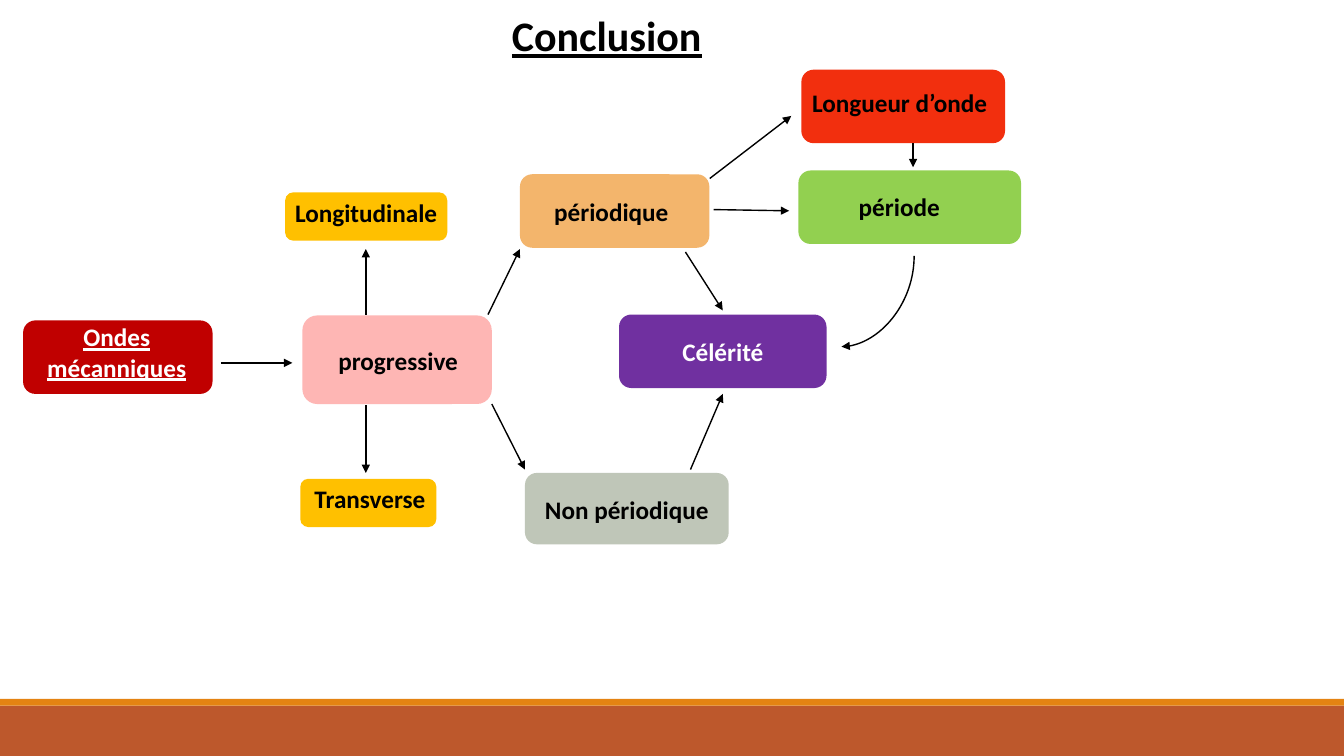
from lxml.etree import SubElement
from pptx import Presentation
from pptx.dml.color import RGBColor
from pptx.enum.shapes import MSO_CONNECTOR as LINK, MSO_SHAPE as SHAPE
from pptx.enum.text import PP_ALIGN as ALIGN
from pptx.oxml.ns import qn
from pptx.util import Inches, Pt

COLS, ROWS = 160, 90
CELL = Inches(1) / 12
BLACK, WHITE = "000000", "FFFFFF"
LINE_H = 4.8  # rows of a one-line label

# fill, box (column, row, width, height)
BOXES = [
    ("7030A0", (73.7, 37.45, 24.7, 8.75)),
    ("C00000", (2.75, 38.15, 22.55, 8.75)),
    ("F3B56C", (61.9, 20.75, 22.55, 8.75)),
    ("92D050", (95.05, 20.3, 26.5, 8.75)),
    ("BFC6B8", (62.5, 56.3, 24.25, 8.5)),
    ("FEB6B4", (36, 37.55, 22.55, 10.55)),
    ("F22F0E", (95.4, 8.3, 24.25, 8.75)),
    ("FFC000", (35.75, 57, 16.2, 5.75)),
    ("FFC000", (33.95, 22.9, 19.3, 5.75)),
]

# text, column, row, width
LABELS = [
    ("Transverse", 36.25, 56.9, 22.55),
    ("périodique", 64.8, 22.8, 16.8),
    ("progressive", 39.1, 40.55, 16.8),
    ("période", 101.05, 22.2, 23.75),
    ("Longueur d’onde", 95.5, 9.85, 26.5),
    ("Non périodique", 63.7, 58.2, 24.25),
    ("Longitudinale", 33.95, 22.9, 22.55),
]

# start column and row, end column and row
ARROWS = [
    (43.55, 48.25, 43.55, 56.3),
    (43.55, 37.45, 43.55, 29.65),
    (58.1, 37.45, 61.9, 29.65),
    (58.55, 48.1, 62.5, 55.9),
    (26.3, 43.2, 34.8, 43.2),
    (84.95, 24.95, 93.95, 25.1),
    (84.5, 21.25, 94.2, 13.8),
    (81.6, 30, 86.05, 36.95),
    (82.2, 55.9, 86.05, 46.9),
    (108.7, 17.05, 108.7, 19.9),
]


def color(code):
    return RGBColor.from_string(code)


def cells(spot):
    return [round(n * CELL) for n in spot]


def block(slide, fill, spot, kind=SHAPE.ROUNDED_RECTANGLE):
    shape = slide.shapes.add_shape(kind, *cells(spot))
    shape.shadow.inherit = False
    shape.fill.solid()
    shape.fill.fore_color.rgb = color(fill)
    shape.line.fill.background()


def label(slide, text, spot, size=18, ink=BLACK, under=False, align=None):
    frame = slide.shapes.add_textbox(*cells(spot)).text_frame
    frame.word_wrap = True
    frame.text = text
    para = frame.paragraphs[0]
    para.alignment = align
    font = para.runs[0].font
    font.name, font.size, font.bold = "Calibri", Pt(size), True
    font.underline = under
    font.color.rgb = color(ink)


def arrow(slide, ends, kind=LINK.STRAIGHT):
    link = slide.shapes.add_connector(kind, *cells(ends))
    link.line.color.rgb = color(BLACK)
    link.line.width = Pt(1)
    props = link._element.spPr
    SubElement(props.find(qn("a:ln")), qn("a:tailEnd"), type="triangle")
    SubElement(props, qn("a:effectLst"))
    return link


def bend(slide, ends):
    """Quarter-turn arrow that leaves downwards and ends to the left."""
    props = arrow(slide, ends, LINK.CURVE)._element.spPr
    props.find(qn("a:prstGeom")).set("prst", "curvedConnector2")
    props.find(qn("a:xfrm")).set("rot", str(90 * 60000))


def main():
    deck = Presentation()
    deck.slide_width, deck.slide_height = cells((COLS, ROWS))
    slide = deck.slides.add_slide(deck.slide_layouts[6])

    block(slide, "BD582C", (0, 84, COLS, 6), SHAPE.RECTANGLE)
    block(slide, "E48312", (0, 83.2, COLS, 0.8), SHAPE.RECTANGLE)
    label(slide, "Conclusion", (59.75, 0.6, 49.45, 7.3), size=30, under=True)

    for fill, spot in BOXES:
        block(slide, fill, spot)
    for text, col, row, width in LABELS:
        label(slide, text, (col, row, width, LINE_H))
    label(slide, "Célérité", (80.05, 39.5, 24.25, LINE_H), ink=WHITE)
    label(slide, "Ondes mécanniques", (4.3, 37.7, 19.2, 8.5),
          ink=WHITE, under=True, align=ALIGN.CENTER)

    for ends in ARROWS:
        arrow(slide, ends)
    bend(slide, (99.1, 31.55, 109.9, 40.2))
    deck.save("out.pptx")


if __name__ == "__main__":
    main()
